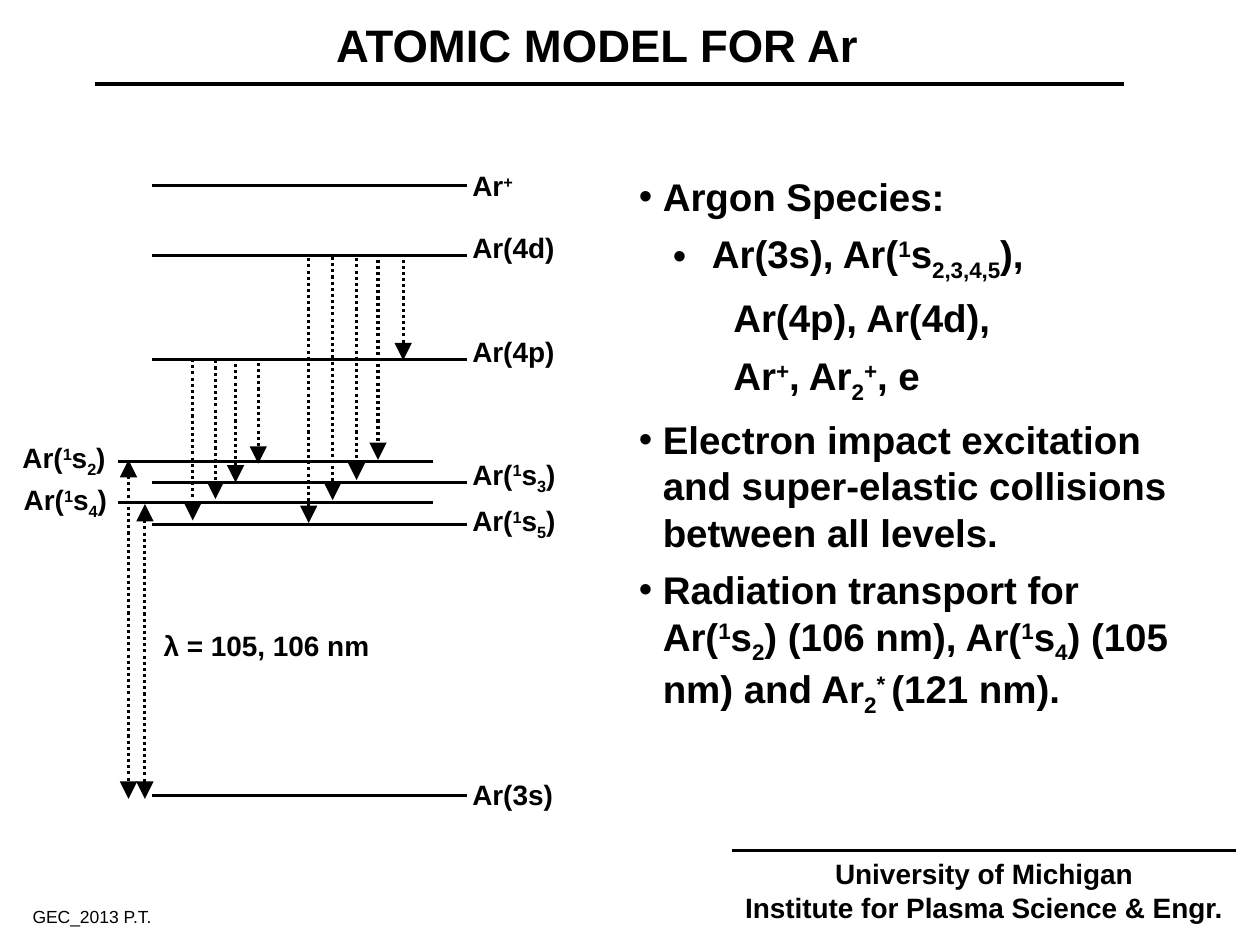
from lxml import etree
from pptx import Presentation
from pptx.dml.color import RGBColor
from pptx.enum.dml import MSO_LINE
from pptx.enum.shapes import MSO_CONNECTOR
from pptx.enum.text import MSO_ANCHOR, MSO_AUTO_SIZE, PP_ALIGN
from pptx.oxml.ns import qn
from pptx.util import Inches, Pt

STRAIGHT = MSO_CONNECTOR.STRAIGHT
DOTS = MSO_LINE.ROUND_DOT
LEFT, CENTER = PP_ALIGN.LEFT, PP_ALIGN.CENTER
TOP = MSO_ANCHOR.TOP
FIXED = MSO_AUTO_SIZE.NONE
FONT, INK = "Arial", "000000"
SHIFTS = {"^": "30000", "~": "-25000"}

# Left end and height of each energy level
LEVELS = [(1.21, 1.47), (1.21, 2.03), (1.21, 2.85), (0.94, 3.66),
          (1.21, 3.83), (0.94, 3.99), (1.21, 4.16), (1.21, 6.31)]
SPAN = 2.5

LABELS = [
    (3.65, 1.29, "Ar|^+"),
    (3.65, 1.78, "Ar(4d)"),
    (3.65, 2.61, "Ar(4p)"),
    (0.08, 3.45, "Ar(|^1|s|~2|)"),
    (3.65, 3.58, "Ar(|^1|s|~3|)"),
    (0.09, 3.78, "Ar(|^1|s|~4|)"),
    (3.65, 3.95, "Ar(|^1|s|~5|)"),
    (3.65, 6.12, "Ar(3s)"),
    (1.2, 4.94, "λ = 105, 106 nm"),
]

# x, start and end of each downward transition
DECAYS = [
    (1.53, 2.85, 4.13), (1.71, 2.86, 3.96), (1.87, 2.89, 3.83),
    (2.05, 2.88, 3.68), (2.45, 2.05, 4.15), (2.64, 2.04, 3.97),
    (2.83, 2.05, 3.81), (3.0, 2.06, 3.65), (3.2, 2.06, 2.86),
]
PUMPS = [(1.02, 3.65, 6.34), (1.15, 4.0, 6.34)]

# Outline level, left margin, first-line indent, bullet, text
POINTS = [
    (0, 0.19, -0.19, True, "Argon Species:"),
    (1, 0.58, -0.31, True, "Ar(3s), Ar(|^1|s|~2,3,4,5|),"),
    (1, 0.75, 0, False, "Ar(4p), Ar(4d),"),
    (1, 0.75, 0, False, "Ar|^+|, Ar|~2|^+|, e"),
    (0, 0.19, -0.19, True, "Electron impact excitation and super-elastic "
     "collisions between all levels."),
    (0, 0.19, -0.19, True, "Radiation transport for Ar(|^1|s|~2|) (106 nm), "
     "Ar(|^1|s|~4|) (105 nm) and Ar|~2|^* |(121 nm)."),
]


def color(code):
    return RGBColor.from_string(code)


def write(para, text, size, bold=True):
    """Add runs split at |, where ^ raises a run and ~ lowers it."""
    for part in text.split("|"):
        shift = SHIFTS.get(part[0])
        run = para.add_run()
        run.text = part[1:] if shift else part
        font = run.font
        font.name, font.size, font.bold = FONT, Pt(size), bold
        font.color.rgb = color(INK)
        if shift:
            run._r.get_or_add_rPr().set("baseline", shift)


def place(shape, left, top, width, height):
    shape.left, shape.top = Inches(left), Inches(top)
    shape.width, shape.height = Inches(width), Inches(height)


def add_text(slide, box, lines, size, bold=True, align=LEFT, wrap=True):
    frame = slide.shapes.add_textbox(*map(Inches, box)).text_frame
    frame.word_wrap = wrap
    for i, line in enumerate(lines):
        para = frame.add_paragraph() if i else frame.paragraphs[0]
        para.alignment = align
        write(para, line, size, bold)


def add_line(slide, x1, y1, x2, y2, width):
    line = slide.shapes.add_connector(
        STRAIGHT, *map(Inches, (x1, y1, x2, y2)))
    line.line.width = Pt(width)
    line.line.color.rgb = color(INK)
    etree.SubElement(line._element.spPr, qn("a:effectLst"))
    return line


def add_arrow(slide, x, start, end, tips):
    line = add_line(slide, x, start, x, end, 1.75).line
    line.dash_style = DOTS
    for tip in tips:
        etree.SubElement(line._ln, qn("a:" + tip),
                         type="triangle", w="lg", len="lg")


def add_title(slide):
    title = slide.shapes.title
    place(title, 2.55, 0.08, 4.38, 0.54)
    frame = title.text_frame
    frame.word_wrap, frame.auto_size = False, FIXED
    write(frame.paragraphs[0], "ATOMIC MODEL FOR Ar", 26)
    add_line(slide, 0.75, 0.67, 8.92, 0.67, 2.25)


def add_points(slide):
    body = slide.placeholders[1]
    place(body, 4.97, 1.32, 4.43, 4.47)
    frame = body.text_frame
    frame.auto_size, frame.vertical_anchor = FIXED, TOP
    for i, (level, margin, indent, dot, text) in enumerate(POINTS):
        para = frame.add_paragraph() if i else frame.paragraphs[0]
        para.level = level
        para.space_before, para.space_after = Pt(0), Pt(6.6)
        props = para._p.get_or_add_pPr()
        props.set("marL", str(Inches(margin)))
        props.set("indent", str(Inches(indent)))
        if dot:
            etree.SubElement(props, qn("a:buFont"), typeface=FONT)
            etree.SubElement(props, qn("a:buChar"), char="•")
        else:
            etree.SubElement(props, qn("a:buNone"))
        write(para, text, 22)


def add_diagram(slide):
    for x, y in LEVELS:
        add_line(slide, x, y, x + SPAN, y, 1.75)
    for x, y, text in LABELS:
        add_text(slide, (x, y, 2, 0.37), [text], 16)
    for decay in DECAYS:
        add_arrow(slide, *decay, ["tailEnd"])
    for pump in PUMPS:
        add_arrow(slide, *pump, ["headEnd", "tailEnd"])


def add_footer(slide):
    add_line(slide, 5.81, 6.75, 9.81, 6.75, 2.25)
    add_text(slide, (5.75, 6.75, 4.12, 0.64),
             ["University of Michigan",
              "Institute for Plasma Science & Engr."], 16, align=CENTER)
    add_text(slide, (0.16, 7.14, 1.19, 0.27), ["GEC_2013 P.T."], 10,
             bold=False, wrap=False)


def main():
    deck = Presentation()
    deck.slide_width, deck.slide_height = Inches(10), Inches(7.5)
    slide = deck.slides.add_slide(deck.slide_layouts[1])
    add_title(slide)
    add_points(slide)
    add_diagram(slide)
    add_footer(slide)
    deck.save("out.pptx")


if __name__ == "__main__":
    main()
